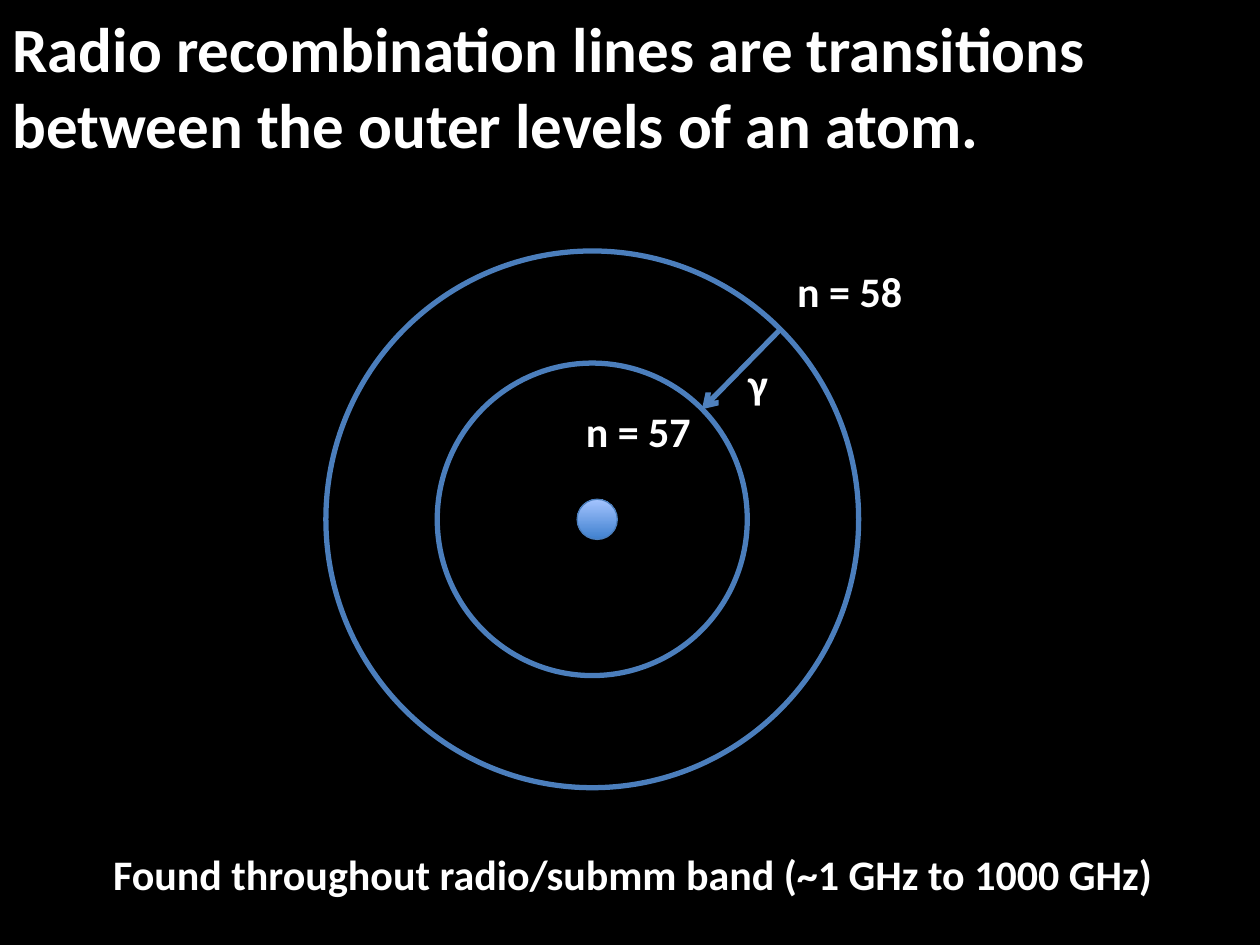
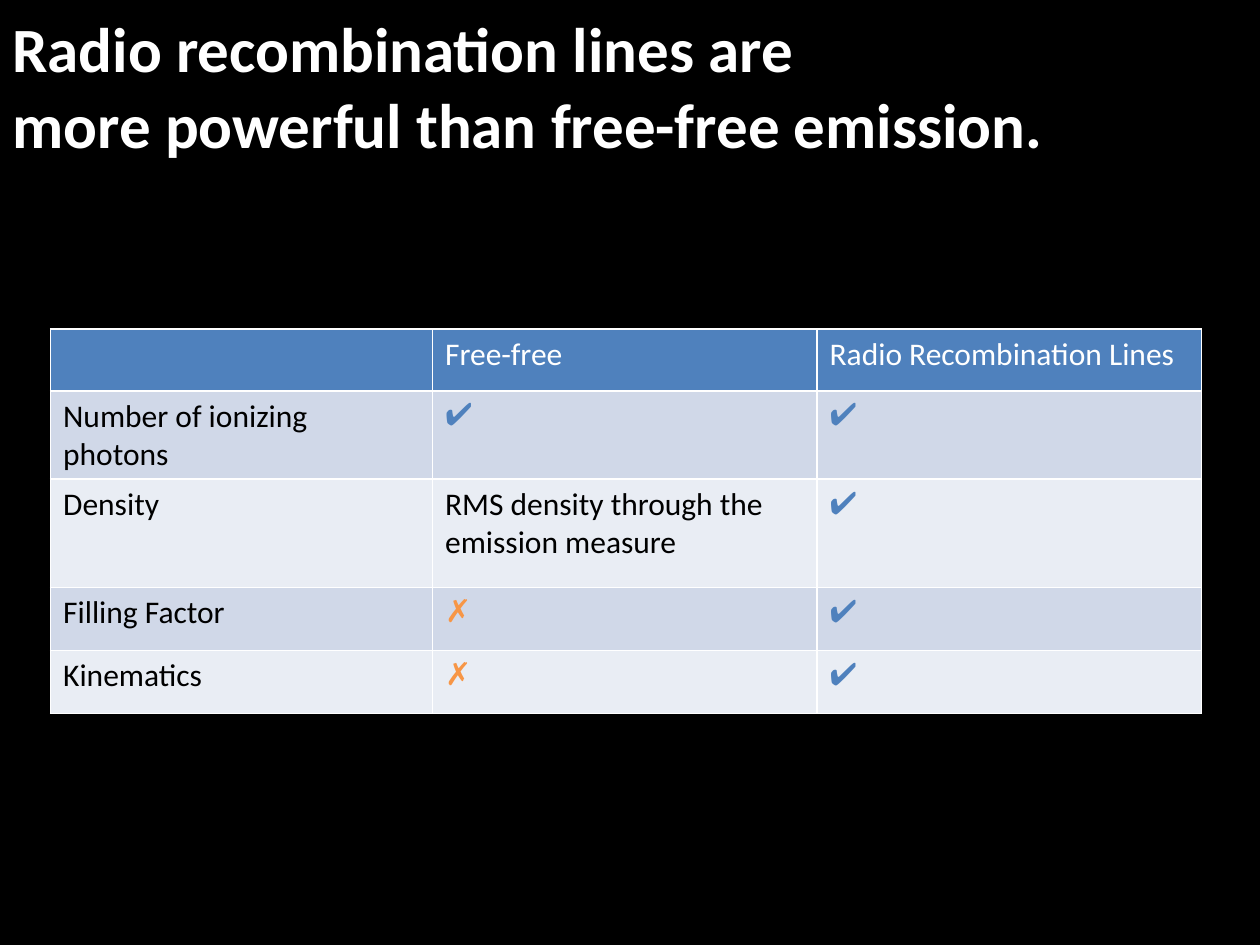
from lxml import etree
from pptx import Presentation
from pptx.dml.color import RGBColor
from pptx.enum import shapes, text
from pptx.oxml import ns
from pptx.util import Cm, Pt

WHITE, BLACK = "FFFFFF", "000000"
BLUE, ORBIT, ORANGE = "4F81BD", "4B7EBC", "F79646"
BANDS = ("D0D8E8", "E9EDF4")
MARKS = {"✔": BLUE, "✗": ORANGE}


def color(value):
    """Turn a hex string into a colour."""
    return RGBColor.from_string(value)


class Slides:
    """Hold the deck style and the current page."""

    def __init__(self):
        """Start an empty deck."""
        self.deck = Presentation()
        self.deck.slide_width, self.deck.slide_height = Cm(25.4), Cm(19.05)

    def page(self, *title):
        """Add a black page with its title lines."""
        self.current = self.deck.slides.add_slide(self.deck.slide_layouts[6])
        background = self.current.background.fill
        background.solid()
        background.fore_color.rgb = color(BLACK)
        self.label(0, 0.05, 25.4, 3.33, title, 36, anchor=text.MSO_ANCHOR.MIDDLE)

    def span(self, para, words, size, hue=WHITE, bold=False, font="Calibri"):
        """Add one run to a paragraph."""
        span = para.add_run()
        span.text = words
        span.font.name, span.font.size, span.font.bold = font, Pt(size), bold
        span.font.color.rgb = color(hue)

    def label(self, left, top, width, height, lines, size=24, wrap=True,
              anchor=text.MSO_ANCHOR.TOP):
        """Add bold white text, one paragraph a line."""
        box = self.current.shapes.add_textbox(Cm(left), Cm(top), Cm(width), Cm(height))
        frame = box.text_frame
        frame.word_wrap, frame.vertical_anchor = wrap, anchor
        for index, words in enumerate(lines):
            para = frame.add_paragraph() if index else frame.paragraphs[0]
            self.span(para, words, size, bold=True)

    def circle(self, center, width, height, line, gradient=None):
        """Add an ellipse around a centre, hollow unless given a gradient."""
        left, top = center[0] - width / 2, center[1] - height / 2
        shape = self.current.shapes.add_shape(
            shapes.MSO_SHAPE.OVAL, Cm(left), Cm(top), Cm(width), Cm(height))
        shape.shadow.inherit = False
        shape.line.color.rgb, shape.line.width = color(ORBIT), Pt(line)
        if gradient:
            shape.fill.gradient()
            shape.fill.gradient_angle = 90
            for stop, hue in zip(shape.fill.gradient_stops, gradient):
                stop.color.rgb = color(hue)
        else:
            shape.fill.background()

    def arrow(self, start, end):
        """Add a straight line with an open head at its end."""
        points = [Cm(length) for length in (*start, *end)]
        arrow = self.current.shapes.add_connector(shapes.MSO_CONNECTOR.STRAIGHT, *points)
        arrow.line.color.rgb, arrow.line.width = color(BLUE), Pt(3)
        etree.SubElement(arrow.line._get_or_add_ln(), ns.qn("a:tailEnd"), type="arrow")
        etree.SubElement(arrow._element.spPr, ns.qn("a:effectLst"))

    def cell(self, cell, words, fill, hue):
        """Border, fill and write one table cell."""
        properties = cell._tc.get_or_add_tcPr()
        for side in "LRTB":
            line = etree.SubElement(properties, ns.qn(f"a:ln{side}"), w=str(Pt(1)))
            solid = etree.SubElement(line, ns.qn("a:solidFill"))
            etree.SubElement(solid, ns.qn("a:srgbClr"), val=WHITE)
        cell.fill.solid()
        cell.fill.fore_color.rgb = color(fill)
        if words:
            font = "Arial" if words in MARKS else "Calibri"
            self.span(cell.text_frame.paragraphs[0], words, 18,
                      MARKS.get(words, hue), font=font)

    def table(self, left, top, widths, heights, rows):
        """Add a table with a blue header and banded rows."""
        table = self.current.shapes.add_table(
            len(rows), len(widths), Cm(left), Cm(top),
            Cm(sum(widths)), Cm(sum(heights))).table
        for column, width in zip(table.columns, widths):
            column.width = Cm(width)
        for index, (height, row) in enumerate(zip(heights, rows)):
            table.rows[index].height = Cm(height)
            fill, hue = (BANDS[(index - 1) % 2], BLACK) if index else (BLUE, WHITE)
            for column, words in enumerate(row):
                self.cell(table.cell(index, column), words, fill, hue)


def main():
    """Build and save the two pages."""
    slides = Slides()

    slides.page("Radio recombination lines are transitions",
                "between the outer levels of an atom.")
    center = (11.94, 10.47)
    slides.circle((12.04, 10.47), 0.81, 0.81, 0.75, ("3F80CE", "A4C4FF"))
    slides.circle(center, 6.25, 6.3, 3)
    slides.circle(center, 10.74, 10.82, 3)
    slides.label(11.56, 8.05, 3.25, 1.27, ["n = 57"])
    slides.label(15.82, 5.23, 3.05, 1.27, ["n = 58"])
    slides.arrow((15.72, 6.65), (14.15, 8.25))
    slides.label(14.83, 7.09, 1.45, 1.27, ["γ"])
    slides.label(2.03, 16.99, 21.67, 1.27,
                 ["Found throughout radio/submm band (~1 GHz to 1000 GHz)"], wrap=False)

    slides.page("Radio recombination lines are",
                "more powerful than free-free emission.")
    slides.table(1.02, 6.63, (7.7, 7.75, 7.75), (1.25, 1.27, 2.18, 1.27, 1.27), (
        ("", "Free-free", "Radio Recombination Lines"),
        ("Number of ionizing photons", "✔", "✔"),
        ("Density", "RMS density through the emission measure", "✔"),
        ("Filling Factor", "✗", "✔"),
        ("Kinematics", "✗", "✔"),
    ))
    slides.deck.save("out.pptx")


if __name__ == "__main__":
    main()
